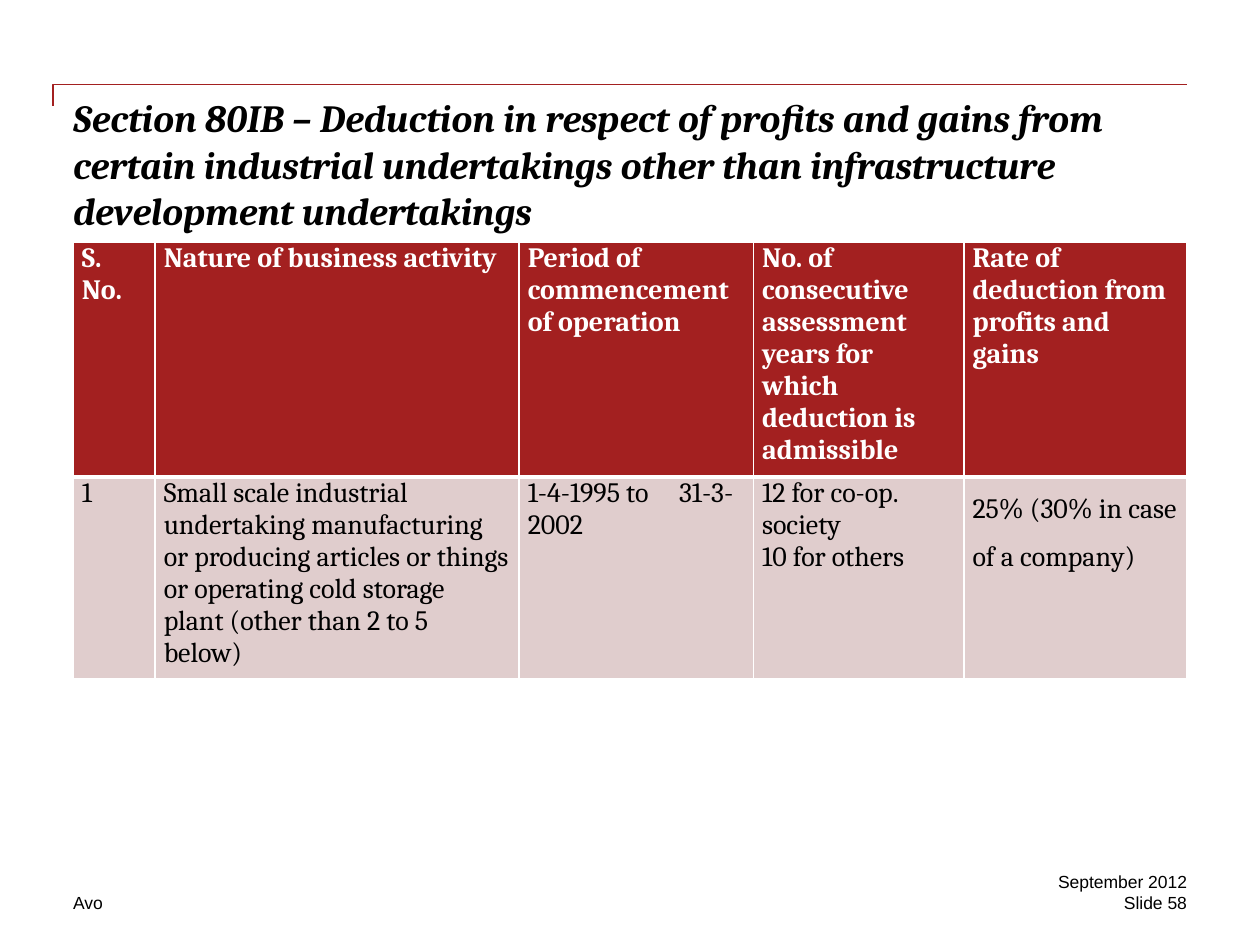
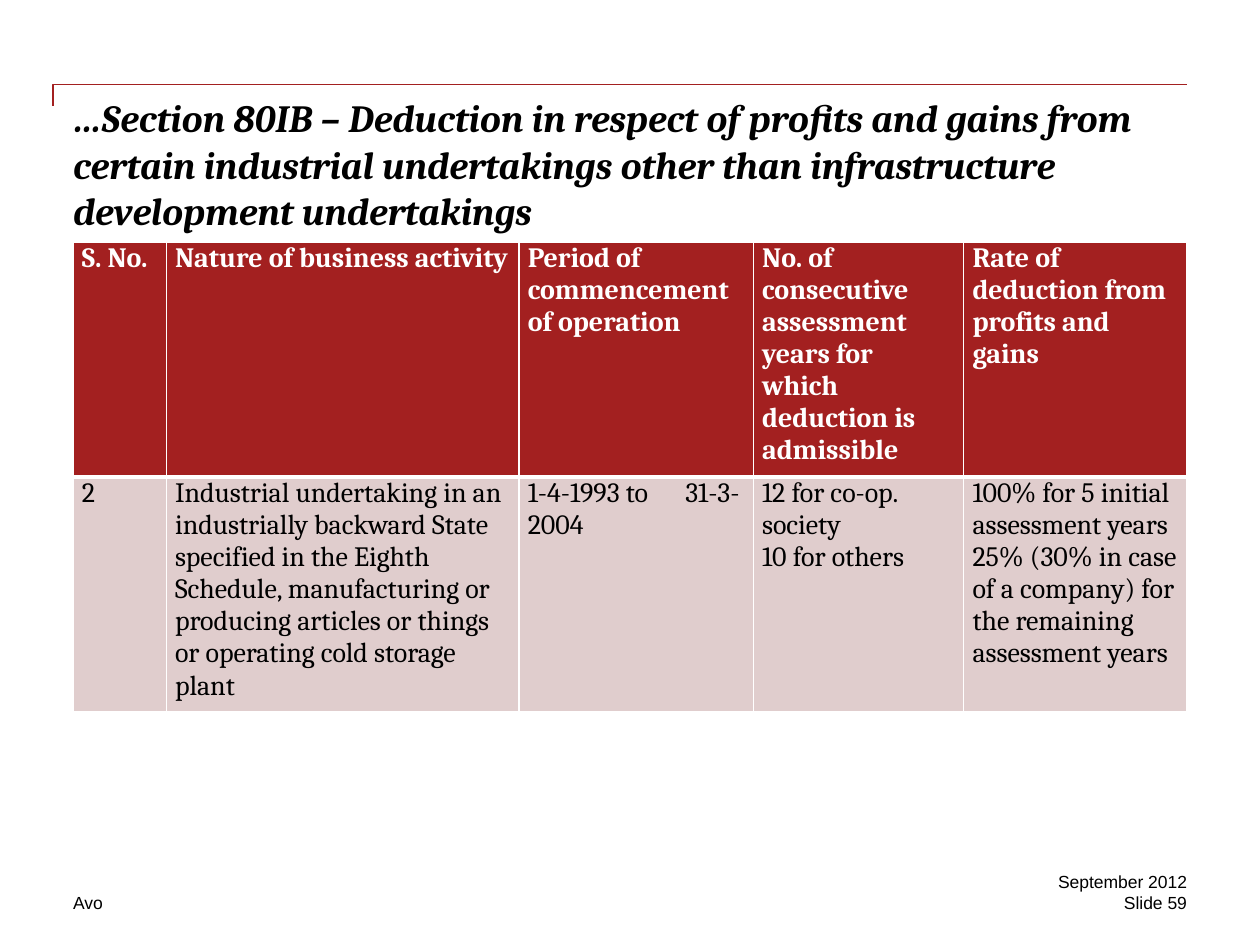
from lxml import etree
from pptx import Presentation
from pptx import util as u
from pptx.dml.color import RGBColor
from pptx.enum import text
from pptx.oxml import ns

RED = RGBColor(0xA3, 0x20, 0x20)
PINK = RGBColor(0xE0, 0xCD, 0xCD)
WHITE = RGBColor(0xFF, 0xFF, 0xFF)
BLACK = RGBColor(0, 0, 0)

TITLE = ("Section 80IB – Deduction in respect of profits and gains from certain industrial "
         "undertakings other than infrastructure development undertakings")
FIRM, DATE = "Avo", "September 2012"
HEADER = [
    "S. No.",
    "Nature of business activity",
    "Period of commencement of operation",
    "No. of consecutive assessment years for which deduction is admissible",
    "Rate of deduction from profits and gains",
]
PAGES = [
    dict(
        number=58, prefix="", serial_width=0.65, body_height=1.53, tab=1.2, rate_spacing=1.5,
        row=["1",
             "Small scale industrial undertaking manufacturing or producing articles or things "
             "or operating cold storage plant (other than 2 to 5 below)",
             "1-4-1995 to\t31-3-2002",
             "12 for co-op. society\n10 for others",
             "25% (30% in case of a company)"]),
    dict(
        number=59, prefix="…", serial_width=0.74, body_height=1.78, tab=1.25, rate_spacing=None,
        row=["2",
             "Industrial undertaking in an industrially backward State specified in the Eighth "
             "Schedule, manufacturing or producing articles or things or operating cold storage plant",
             "1-4-1993 to\t31-3-2004",
             "12 for co-op. society\n10 for others",
             "100% for 5 initial assessment years\n"
             "25% (30% in case of a company) for the remaining assessment years"]),
]

WIDTH, HEIGHT = 10, 7.5
LEFT, RIGHT = 0.58, 9.42
RULE_LEFT, RULE_TOP = 0.42, 0.67
LINE = 0.17
FOOTER_TOP = 7.08
TABLE_TOP, HEADER_HEIGHT = 1.92, 1.78
PERIOD, YEARS, RATE = 1.86, 1.67, 1.77


def style(p, size, font, color=BLACK, bold=False, italic=False):
    f = p.font
    f.size, f.name, f.bold, f.italic = u.Pt(size), font, bold, italic
    f.color.rgb = color


def add_text(s, words, x, y, w, h, size, font, align=text.PP_ALIGN.LEFT, **look):
    tf = s.shapes.add_textbox(*map(u.Inches, (x, y, w, h))).text_frame
    tf.word_wrap = True
    tf.margin_left = tf.margin_top = tf.margin_right = tf.margin_bottom = 0
    p = tf.paragraphs[0]
    p.text, p.alignment = words, align
    style(p, size, font, **look)


def add_rule(s):
    builder = s.shapes.build_freeform(u.Inches(RULE_LEFT), u.Inches(RULE_TOP + LINE))
    corners = [(RULE_LEFT, RULE_TOP), (RIGHT, RULE_TOP)]
    builder.add_line_segments([(u.Inches(x), u.Inches(y)) for x, y in corners], close=False)
    sp = builder.convert_to_shape()
    sp.shadow.inherit = False
    sp.fill.background()
    sp.line.color.rgb, sp.line.width = RED, u.Pt(1)


def add_borders(cell, **widths):
    tcPr = cell._tc.get_or_add_tcPr()
    for side in "LRTB":
        ln = etree.SubElement(tcPr, ns.qn(f"a:ln{side}"), w=str(u.Pt(widths.get(side, 1))))
        fill = etree.SubElement(ln, ns.qn("a:solidFill"))
        etree.SubElement(fill, ns.qn("a:srgbClr"), val=str(WHITE))


def add_tab_stop(p, inches):
    tabs = etree.SubElement(p._p.get_or_add_pPr(), ns.qn("a:tabLst"))
    etree.SubElement(tabs, ns.qn("a:tab"), pos=str(u.Inches(inches)), algn="l")


def add_table(s, page):
    total = RIGHT - LEFT
    nature = total - page["serial_width"] - PERIOD - YEARS - RATE
    columns = [page["serial_width"], nature, PERIOD, YEARS, RATE]
    heights = [HEADER_HEIGHT, page["body_height"]]
    frame = s.shapes.add_table(len(heights), len(columns), *map(
        u.Inches, (LEFT, TABLE_TOP, total, sum(heights))))
    table = frame.table
    table.first_row = table.horz_banding = False
    for column, w in zip(table.columns, columns):
        column.width = u.Inches(w)
    looks = [(HEADER, RED, WHITE, True, {"B": 3}), (page["row"], PINK, BLACK, False, {"T": 3})]
    for i, (words, fill, color, bold, borders) in enumerate(looks):
        table.rows[i].height = u.Inches(heights[i])
        for j, word in enumerate(words):
            cell = table.cell(i, j)
            cell.margin_left = cell.margin_right = u.Inches(0.07)
            cell.margin_top = cell.margin_bottom = 0
            add_borders(cell, **borders)
            cell.fill.solid()
            cell.fill.fore_color.rgb = fill
            cell.text_frame.text = word
            for p in cell.text_frame.paragraphs:
                if "\t" in word:
                    add_tab_stop(p, page["tab"])
                style(p, 16, "Cambria", color, bold)
    table.cell(1, 4).text_frame.paragraphs[0].line_spacing = page["rate_spacing"]


def add_page(prs, page):
    s = prs.slides.add_slide(prs.slide_layouts[6])
    add_rule(s)
    add_text(s, FIRM, LEFT, FOOTER_TOP, 2.83, LINE, 10, "Arial")
    add_text(s, page["prefix"] + TITLE, LEFT, 0.75, RIGHT - LEFT, 1, 22, "Cambria",
             bold=True, italic=True)
    add_table(s, page)
    for k, words in enumerate([f"Slide {page['number']}", DATE]):
        add_text(s, words, 7.75, FOOTER_TOP - k * LINE, RIGHT - 7.75, LINE, 10, "Arial",
                 align=text.PP_ALIGN.RIGHT)


def main():
    prs = Presentation()
    prs.slide_width, prs.slide_height = u.Inches(WIDTH), u.Inches(HEIGHT)
    for page in PAGES:
        add_page(prs, page)
    prs.save("out.pptx")


if __name__ == "__main__":
    main()
